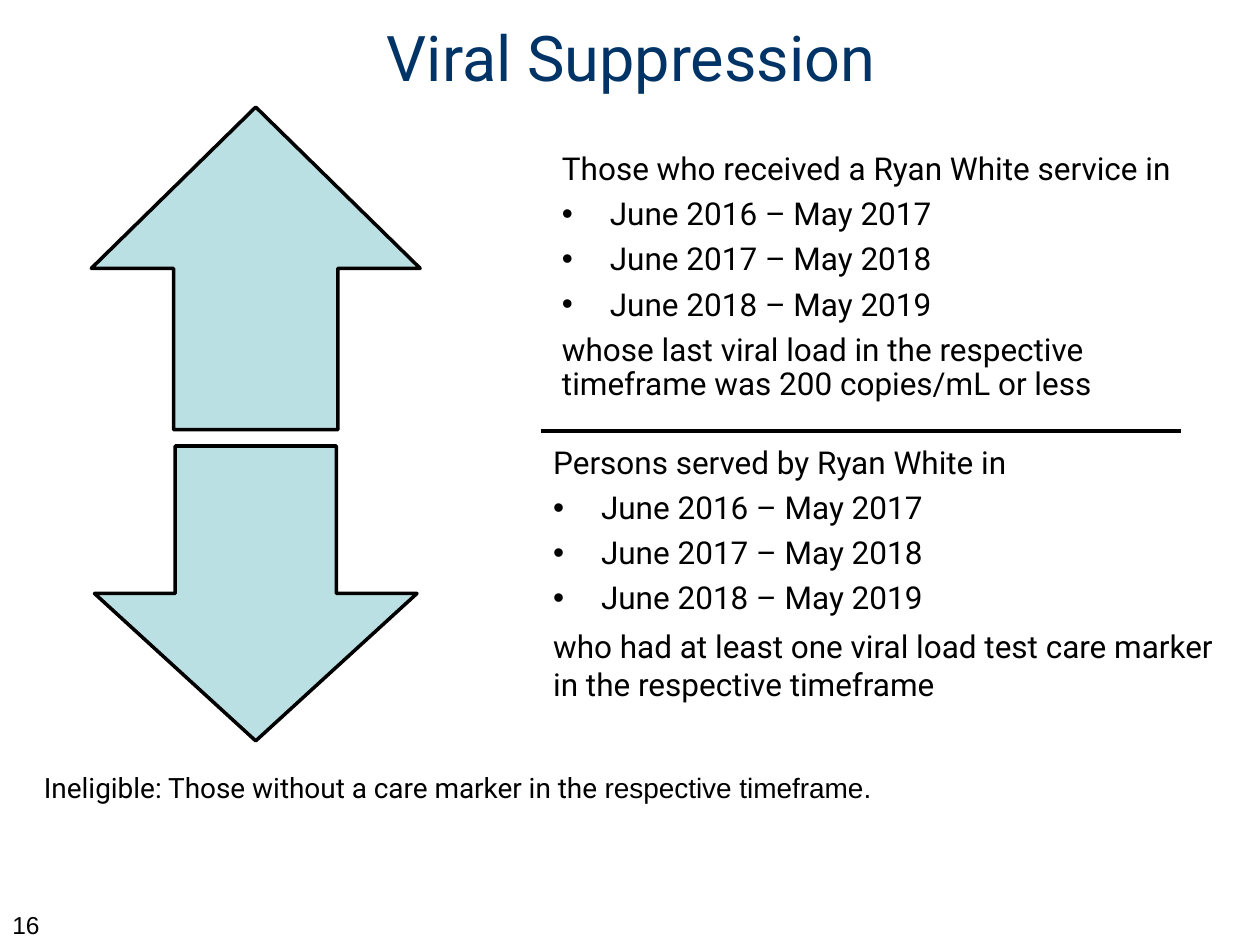
from lxml import etree
from pptx import Presentation
from pptx.dml.color import RGBColor
from pptx.enum.shapes import MSO_CONNECTOR, MSO_SHAPE
from pptx.enum.text import MSO_ANCHOR, MSO_AUTO_SIZE, PP_ALIGN
from pptx.oxml.ns import qn
from pptx.util import Inches, Pt

UP, DOWN = MSO_SHAPE.UP_ARROW, MSO_SHAPE.DOWN_ARROW
TOP, MID = MSO_ANCHOR.TOP, MSO_ANCHOR.MIDDLE
TWO_COLS = 3
BLACK, NAVY, TEAL = "000000", "003366", "BBE0E3"


def color(code):
    return RGBColor.from_string(code)


def write(para, text, size, face="Roboto", code=BLACK):
    run = para.add_run()
    run.text = text
    run.font.size, run.font.name = Pt(size), face
    run.font.color.rgb = color(code)


deck = Presentation()
deck.slide_width, deck.slide_height = Inches(10), Inches(7.5)
slide = deck.slides.add_slide(deck.slide_layouts[TWO_COLS])
shapes = slide.shapes
title, upper, lower = slide.placeholders

# Title
title.left, title.top, title.width, title.height = map(Inches, (0.51, 0.16, 9, 0.58))
title.text_frame.vertical_anchor = MID
title.text_frame.auto_size = MSO_AUTO_SIZE.NONE
head = title.text_frame.paragraphs[0]
head.alignment = PP_ALIGN.CENTER
write(head, "Viral Suppression", 36, code=NAVY)

# Arrows, centred on one axis
axis = 2.03
for kind, top, wide, high in ((UP, 0.85, 2.61, 2.56), (DOWN, 3.54, 2.56, 2.34)):
    arrow = shapes.add_shape(kind, Inches(axis - wide / 2), Inches(top),
                             Inches(wide), Inches(high))
    arrow.shadow.inherit = False
    arrow.fill.solid()
    arrow.fill.fore_color.rgb = color(TEAL)
    arrow.line.color.rgb = color(BLACK)
    arrow.line.width = Pt(2)

# Fraction bar
left, bar_y = 4.29, 3.42
bar = shapes.add_connector(MSO_CONNECTOR.STRAIGHT, Inches(left), Inches(bar_y),
                           Inches(9.37), Inches(bar_y))
bar.line.color.rgb = color(BLACK)
bar.line.width = Pt(2.5)
etree.SubElement(bar._element.spPr, qn("a:effectLst"))

# Text above and below the bar
spans = ["June 2016 – May 2017", "June 2017 – May 2018", "June 2018 – May 2019"]
parts = (
    (upper, (1.08, 5.35, 2.42), MID, (0.17, 0, 0.17, 0.17), 0.9,
     "Those who received a Ryan White service in",
     "whose last viral load in the respective timeframe was 200 copies/mL or less"),
    (lower, (3.5, 5.5, 2.36), TOP, (0.1, 0.05, 0.1, 0.05), 1,
     "Persons served by Ryan White in",
     "who had at least one viral load test care marker in the respective timeframe"),
)
for box, (top, wide, high), anchor, inset, last, intro, close in parts:
    box.left, box.top, box.width, box.height = map(Inches, (left, top, wide, high))
    frame = box.text_frame
    look = {"vertical_anchor": anchor, "auto_size": MSO_AUTO_SIZE.NONE, "word_wrap": True}
    for side, gap in zip(("left", "top", "right", "bottom"), inset):
        look["margin_" + side] = Inches(gap)
    for name, value in look.items():
        setattr(frame, name, value)
    for row, text in enumerate([intro, *spans, close]):
        para = frame.add_paragraph() if row else frame.paragraphs[0]
        props = para._p.get_or_add_pPr()
        dent = Inches(0.38) if text in spans else 0
        props.set("marL", str(dent))
        props.set("indent", str(-dent))
        if dent:
            etree.SubElement(props, qn("a:buChar")).set("char", "•")
        else:
            etree.SubElement(props, qn("a:buNone"))
        para.line_spacing = last if text == close else 0.9
        para.space_before = Pt(0)
        para.space_after = Pt(0 if text == close and last == 1 else 6.3)
        write(para, text, 18)

# Footnote and page number
notes = (
    ((0.25, 6.07, 7.89, 0.64), 16,
     (("Ineligible: Those without a care marker in the ", "Roboto"),
      ("respective timeframe.", "Arial"))),
    ((0, 7.17, 2.33, 0.25), 14, (("16", "Arial"),)),
)
for place, size, runs in notes:
    frame = shapes.add_textbox(*map(Inches, place)).text_frame
    frame.word_wrap = True
    for text, face in runs:
        write(frame.paragraphs[0], text, size, face)

deck.save("out.pptx")
